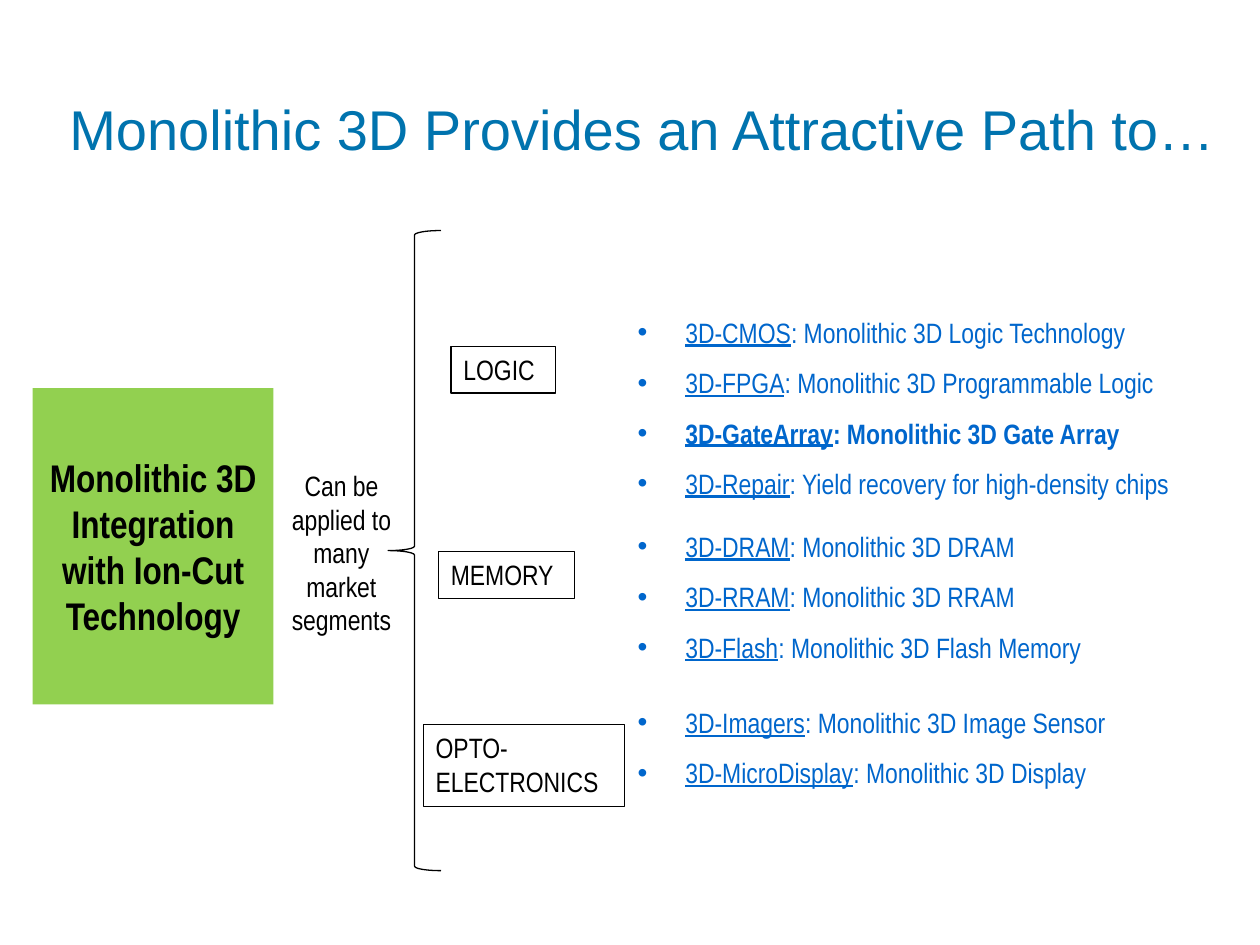
from lxml import etree
from pptx import Presentation
from pptx import util as u
from pptx.dml.color import RGBColor
from pptx.enum import shapes, text
from pptx.oxml.ns import qn

COLORS = {"title": "0073AE", "list": "0066CC", "block": "92D050", "ink": "000000"}
BODY_FONT = "Arial Narrow"

presentation = Presentation()
presentation.slide_width, presentation.slide_height = u.Inches(10), u.Inches(7.5)
slide = presentation.slides.add_slide(presentation.slide_layouts[1])


def place(shape, left, top, width, height):
    shape.left, shape.top = u.Inches(left), u.Inches(top)
    shape.width, shape.height = u.Inches(width), u.Inches(height)


def style(paragraph, size, color, name=BODY_FONT, align=text.PP_ALIGN.LEFT):
    paragraph.alignment = align
    paragraph.font.size = u.Pt(size)
    paragraph.font.name = name
    paragraph.font.color.rgb = RGBColor.from_string(COLORS[color])


# Title
title = slide.shapes.title
place(title, 0.45, 0.39, 9.43, 1.25)
title.text_frame.text = "Monolithic 3D Provides an Attractive Path to…"
title.text_frame.vertical_anchor = text.MSO_ANCHOR.MIDDLE
style(title.text_frame.paragraphs[0], 32, "title", "Arial")

# Product list: space before each group in points, then its products
product_groups = [
    (0, [("3D-CMOS", "Monolithic 3D Logic Technology"),
         ("3D-FPGA", "Monolithic 3D Programmable Logic"),
         ("3D-GateArray", "Monolithic 3D Gate Array"),
         ("3D-Repair", "Yield recovery for high-density chips")]),
    (7.2, [("3D-DRAM", "Monolithic 3D DRAM"),
           ("3D-RRAM", "Monolithic 3D RRAM"),
           ("3D-Flash", "Monolithic 3D Flash Memory")]),
    (14.4, [("3D-Imagers", "Monolithic 3D Image Sensor"),
            ("3D-MicroDisplay", "Monolithic 3D Display")]),
]
body = slide.placeholders[1]
place(body, 4.96, 2.32, 5.18, 4.95)
frame = body.text_frame
frame.auto_size = text.MSO_AUTO_SIZE.NONE
paragraph = frame.paragraphs[0]
for gap, products in product_groups:
    for index, (product, description) in enumerate(products):
        if paragraph.runs:
            paragraph = frame.add_paragraph()
        paragraph.line_spacing = 1.5
        paragraph.space_before = u.Pt(0 if index else gap)
        properties = paragraph._p.get_or_add_pPr()
        properties.set("marL", str(u.Inches(0.38)))
        properties.set("indent", str(u.Inches(-0.38)))
        etree.SubElement(properties, qn("a:buFont"), typeface="Arial")
        etree.SubElement(properties, qn("a:buChar"), char="•")
        style(paragraph, 16, "list")
        paragraph.font.bold = product == "3D-GateArray"
        name_run = paragraph.add_run()
        name_run.text = product
        name_run.font.underline = True
        paragraph.add_run().text = f": {description}"

# Technology block
block = slide.shapes.add_shape(shapes.MSO_SHAPE.RECTANGLE, 0, 0, 0, 0)
place(block, 0.26, 3.08, 1.91, 2.51)
block.shadow.inherit = False
block.fill.solid()
block.fill.fore_color.rgb = RGBColor.from_string(COLORS["block"])
block.line.fill.background()
block.text_frame.text = "Monolithic 3D Integration with Ion-Cut Technology"
block.text_frame.word_wrap = True
block.text_frame.vertical_anchor = text.MSO_ANCHOR.MIDDLE
style(block.text_frame.paragraphs[0], 22, "ink", align=text.PP_ALIGN.CENTER)
block.text_frame.paragraphs[0].font.bold = True

# Brace and market segment labels
outlined = [
    (shapes.MSO_SHAPE.LEFT_BRACE, "", (3.08, 1.83, 0.42, 5.08)),
    (shapes.MSO_SHAPE.RECTANGLE, "LOGIC", (3.58, 2.75, 0.83, 0.37)),
    (shapes.MSO_SHAPE.RECTANGLE, "MEMORY", (3.48, 4.38, 1.08, 0.37)),
    (shapes.MSO_SHAPE.RECTANGLE, "OPTO-ELECTRONICS", (3.36, 5.75, 1.6, 0.65)),
]
for kind, label, box in outlined:
    shape = slide.shapes.add_shape(kind, 0, 0, 0, 0)
    place(shape, *box)
    shape.shadow.inherit = False
    shape.fill.background()
    shape.line.color.rgb = RGBColor.from_string(COLORS["ink"])
    shape.line.width = u.Pt(0.75)
    if label:
        shape.text_frame.text = label
        shape.text_frame.word_wrap = True
        shape.text_frame.vertical_anchor = text.MSO_ANCHOR.TOP
        style(shape.text_frame.paragraphs[0], 16, "ink")

# Caption between the block and the brace
caption = slide.shapes.add_textbox(0, 0, 0, 0)
place(caption, 2.17, 3.67, 1.08, 1.45)
caption.text_frame.text = "Can be applied to many market segments"
caption.text_frame.word_wrap = True
style(caption.text_frame.paragraphs[0], 16, "ink", align=text.PP_ALIGN.CENTER)

presentation.save("out.pptx")
